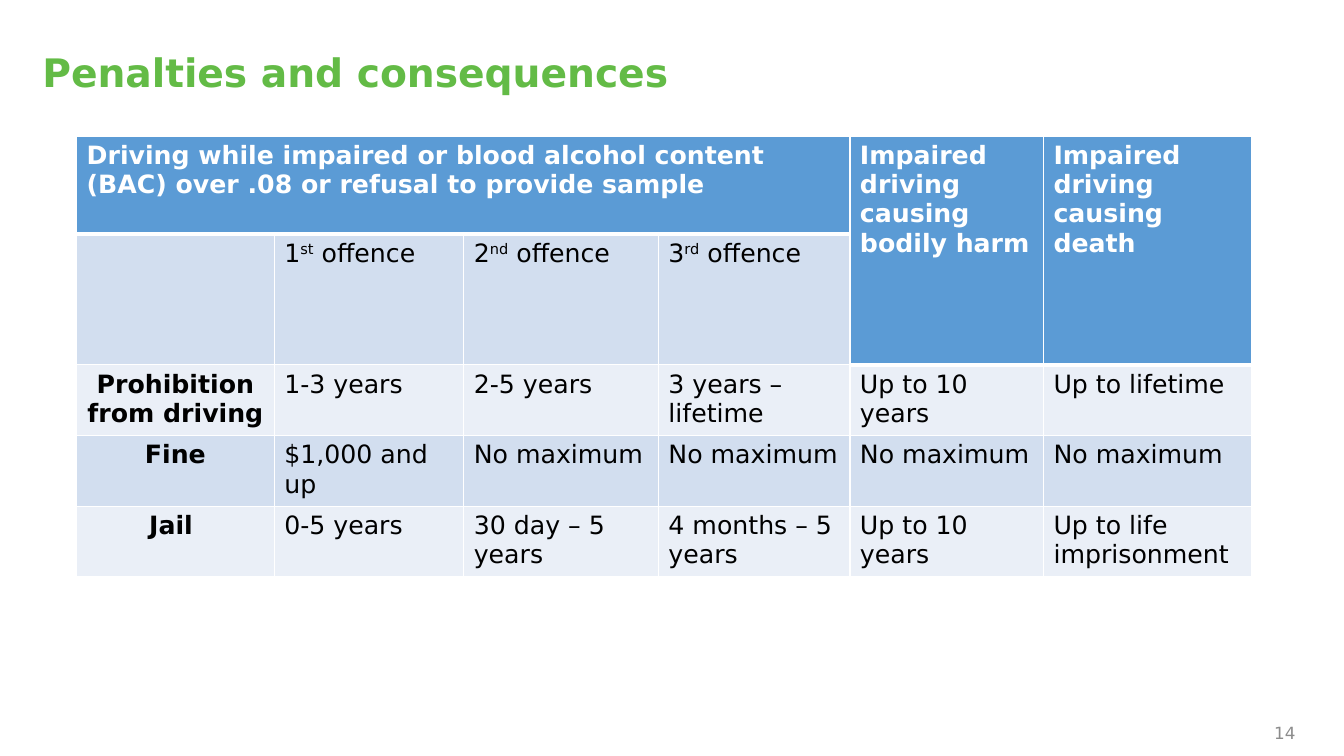
from lxml import etree
from pptx import Presentation
from pptx import util as u
from pptx.dml import color
from pptx.enum import text
from pptx.oxml import ns

WIDTH, HEIGHT = 13.33, 7.5
FONT = "DejaVu Sans"
GREEN, BLUE, WHITE, BLACK, GREY = "63BB46", "5B9BD5", "FFFFFF", "000000", "8C8C8C"
BANDS = ("D2DEEF", "EAEFF7")
COLUMNS = (1.96, 1.88, 1.93, 1.9, 1.92, 2.06)
ROWS = (0.97, 1.25, 0.68, 0.68, 0.68)
HEADINGS = {
    0: "Driving while impaired or blood alcohol content (BAC) over .08 "
       "or refusal to provide sample",
    4: "Impaired driving causing bodily harm",
    5: "Impaired driving causing death",
}
OFFENCES = (("1", "st"), ("2", "nd"), ("3", "rd"))
PENALTIES = (
    ("Prohibition from driving", "1-3 years", "2-5 years", "3 years – lifetime",
     "Up to 10 years", "Up to lifetime"),
    ("Fine", "$1,000 and up") + ("No maximum",) * 4,
    ("Jail ", "0-5 years", "30 day – 5 years", "4 months – 5 years",
     "Up to 10 years", "Up to life imprisonment"),
)


def paint(target, value):
    target.rgb = color.RGBColor.from_string(value)


def add_span(para, words, size, tint, bold=False, raised=False):
    span = para.add_run()
    span.text = words
    span.font.name, span.font.size, span.font.bold = FONT, u.Pt(size), bold
    paint(span.font.color, tint)
    if raised:
        span.font._element.set("baseline", "30000")


def add_label(page, box, words, size, tint, anchor, align, bold=False):
    label = page.shapes.add_textbox(*(u.Inches(side) for side in box))
    frame = label.text_frame
    frame.word_wrap = True
    frame.vertical_anchor = anchor
    frame.margin_left = frame.margin_right = frame.margin_top = frame.margin_bottom = 0
    para = frame.paragraphs[0]
    para.alignment = align
    add_span(para, words, size, tint, bold)
    return para


def style_cell(cell, fill, bottom):
    properties = cell._tc.get_or_add_tcPr()
    for edge, points in (("L", 1), ("R", 1), ("T", 1), ("B", bottom)):
        line = etree.SubElement(properties, ns.qn(f"a:ln{edge}"), w=str(u.Pt(points)))
        solid = etree.SubElement(line, ns.qn("a:solidFill"))
        etree.SubElement(solid, ns.qn("a:srgbClr"), val=WHITE)
    cell.fill.solid()
    paint(cell.fill.fore_color, fill)


def add_penalties(page, left, top):
    box = (left, top, sum(COLUMNS), sum(ROWS))
    table = page.shapes.add_table(
        len(ROWS), len(COLUMNS), *(u.Inches(side) for side in box)).table
    for column, width in zip(table.columns, COLUMNS):
        column.width = u.Inches(width)
    for row, height in zip(table.rows, ROWS):
        row.height = u.Inches(height)
    for r in range(len(ROWS)):
        for c in range(len(COLUMNS)):
            heading = r == 0 or (r == 1 and c > 3)
            style_cell(table.cell(r, c), BLUE if heading else BANDS[(r + 1) % 2],
                       3 if heading else 1)
    table.cell(0, 0).merge(table.cell(0, 3))
    for c in (4, 5):
        table.cell(0, c).merge(table.cell(1, c))

    def cell_para(r, c):
        return table.cell(r, c).text_frame.paragraphs[0]

    for c, words in HEADINGS.items():
        add_span(cell_para(0, c), words, 18, WHITE, True)
    for c, (number, suffix) in enumerate(OFFENCES, 1):
        para = cell_para(1, c)
        add_span(para, number, 18, BLACK)
        add_span(para, suffix, 18, BLACK, raised=True)
        add_span(para, " offence", 18, BLACK)
    for r, penalty in enumerate(PENALTIES, 2):
        for c, words in enumerate(penalty):
            para = cell_para(r, c)
            if c == 0:
                para.alignment = text.PP_ALIGN.CENTER
            add_span(para, words, 18, BLACK, c == 0)


def main():
    deck = Presentation()
    deck.slide_width, deck.slide_height = u.Inches(WIDTH), u.Inches(HEIGHT)
    page = deck.slides.add_slide(deck.slide_layouts[6])
    title = add_label(page, (0.42, 0.49, 11.75, 0.51), "Penalties and consequences", 28,
                      GREEN, text.MSO_ANCHOR.MIDDLE, text.PP_ALIGN.LEFT, True)
    title.line_spacing = 0.9
    add_penalties(page, 0.76, 1.35)
    add_label(page, (9.85, 6.97, 3, 0.4), "14", 12, GREY,
              text.MSO_ANCHOR.BOTTOM, text.PP_ALIGN.RIGHT)
    deck.save("out.pptx")


if __name__ == "__main__":
    main()
